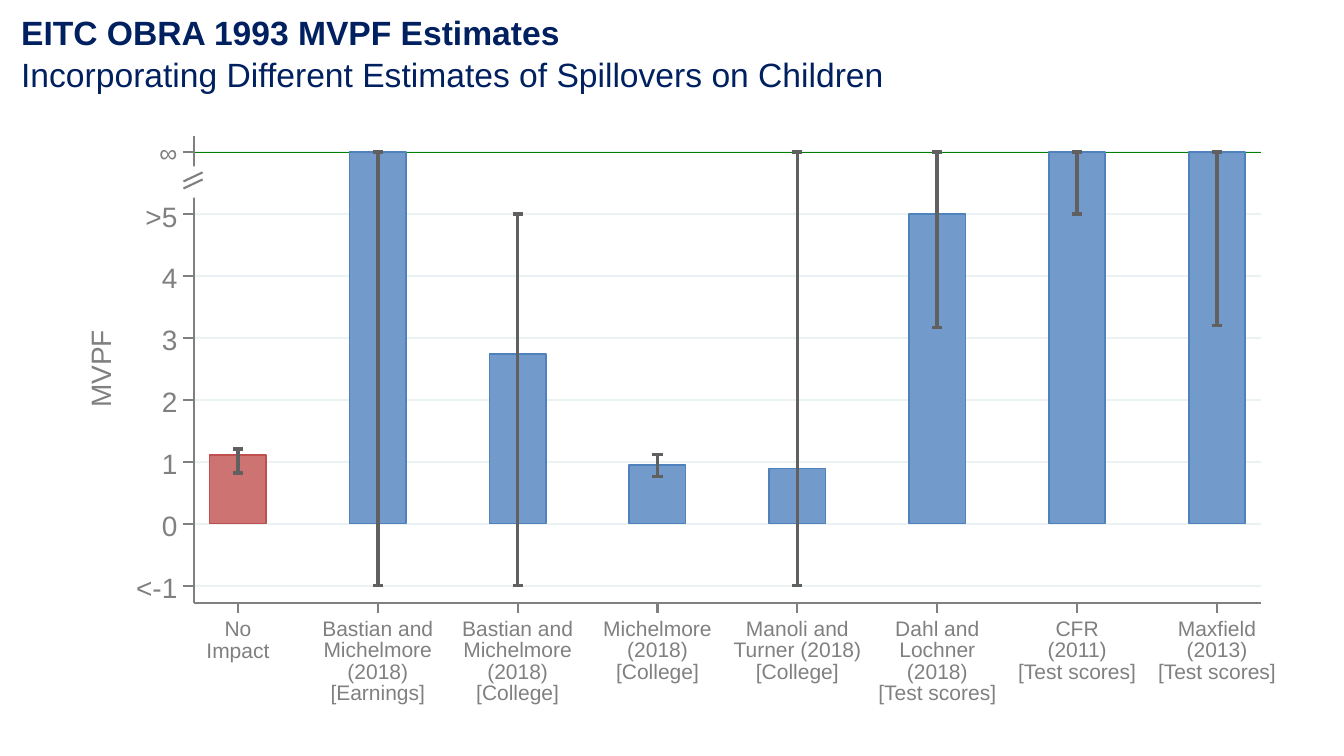
from pptx import Presentation
from pptx.dml.color import RGBColor
from pptx.enum.shapes import MSO_CONNECTOR, MSO_SHAPE
from pptx.enum.text import MSO_ANCHOR, PP_ALIGN
from pptx.oxml.ns import qn
from pptx.util import Inches, Pt
from lxml.etree import SubElement

COLORS = {
    "navy": "002060", "white": "FFFFFF", "grid": "EAF2F3", "green": "008000",
    "axis": "808080", "error": "606060", "red": "CD7371", "red edge": "C0504D",
    "blue": "729ACA", "blue edge": "4F81BD",
}
LEFT, RIGHT, TOP, BASE = 1.92, 12.51, 1.35, 5.98
LOW, HIGH = 5.81, 1.51
UNIT = (LOW - HIGH) / 7
FIRST, LAST = 2.36, 12.07
BAR, CAP, TICK = 0.56, 0.1, 0.1
INF = 6
SCALE = ["<-1", "0", "1", "2", "3", "4", ">5", "∞"]
STUDIES = [
    (["No", "Impact"], 1.11, 0.82, 1.21),
    (["Bastian and", "Michelmore", "(2018)", "[Earnings]"], INF, -1, INF),
    (["Bastian and", "Michelmore", "(2018)", "[College]"], 2.74, -1, 5),
    (["Michelmore", "(2018)", "[College]"], 0.95, 0.76, 1.12),
    (["Manoli and", "Turner (2018)", "[College]"], 0.89, -1, INF),
    (["Dahl and", "Lochner", "(2018)", "[Test scores]"], 5, 3.17, INF),
    (["CFR", "(2011)", "[Test scores]"], INF, 5, INF),
    (["Maxfield", "(2013)", "[Test scores]"], INF, 3.2, INF),
]


def rgb(name):
    return RGBColor.from_string(COLORS[name])


def level(value):
    return LOW - (value + 1) * UNIT


def add_line(slide, x1, y1, x2, y2, color, width=1.5):
    line = slide.shapes.add_connector(
        MSO_CONNECTOR.STRAIGHT, Inches(x1), Inches(y1), Inches(x2), Inches(y2))
    line.line.color.rgb = rgb(color)
    line.line.width = Pt(width)
    SubElement(line._element.spPr, qn("a:effectLst"))
    return line


def add_box(slide, left, top, width, height, fill, edge=None):
    box = slide.shapes.add_shape(
        MSO_SHAPE.RECTANGLE, Inches(left), Inches(top), Inches(width), Inches(height))
    box.shadow.inherit = False
    box.fill.solid()
    box.fill.fore_color.rgb = rgb(fill)
    if edge:
        box.line.color.rgb = rgb(edge)
        box.line.width = Pt(1.13)
    else:
        box.line.fill.background()
    return box


def set_text(shape, lines, size, color, align, pitch=None):
    frame = shape.text_frame
    frame.margin_left = frame.margin_right = 0
    frame.margin_top = frame.margin_bottom = 0
    frame.word_wrap = True
    frame.vertical_anchor = MSO_ANCHOR.TOP
    frame.text = "\n".join(lines)
    for para in frame.paragraphs:
        para.alignment = align
        para.line_spacing = pitch
        para.font.name = "Arial"
        para.font.size = Pt(size)
        para.font.color.rgb = rgb(color)
        para.font.bold = False


def add_text(slide, left, top, width, height, lines, size, align, pitch=None):
    box = slide.shapes.add_textbox(
        Inches(left), Inches(top), Inches(width), Inches(height))
    set_text(box, lines, size, "axis", align, pitch)
    return box


def add_title(slide):
    title = slide.shapes.title
    title.left, title.top = Inches(0.21), Inches(0.1)
    title.width, title.height = Inches(11.62), Inches(0.81)
    set_text(title, ["EITC OBRA 1993 MVPF Estimates",
                     "Incorporating Different Estimates of Spillovers on Children"],
             24, "navy", PP_ALIGN.LEFT, 1.05)
    title.text_frame.paragraphs[0].font.bold = True


def add_grid(slide):
    for value in range(-1, INF + 1):
        add_line(slide, LEFT, level(value), RIGHT, level(value), "grid")
    add_line(slide, LEFT, HIGH, RIGHT, HIGH, "green", 0.75)


def add_study(slide, x, lines, value, low, high):
    hue = "red" if lines[0] == "No" else "blue"
    bar = add_box(slide, x - BAR / 2, level(value), BAR, value * UNIT,
                  hue, hue + " edge")
    stem = add_line(slide, x, level(high), x, level(low), "error", 2.5)
    if high == value:
        stem.begin_connect(bar, 0)
    for end in (high, low):
        add_line(slide, x - CAP / 2, level(end), x + CAP / 2, level(end),
                 "error", 2.5)
    add_line(slide, x, BASE, x, BASE + TICK, "axis")
    add_text(slide, x - 0.69, 6.15, 1.38, 0.21 * len(lines), lines, 15,
             PP_ALIGN.CENTER, Pt(15.1))


def add_axes(slide):
    add_line(slide, LEFT, BASE, LEFT, TOP, "axis")
    add_line(slide, LEFT, BASE, RIGHT, BASE, "axis")
    for value, mark in enumerate(SCALE, -1):
        y = level(value)
        add_line(slide, LEFT, y, LEFT - TICK, y, "axis")
        add_text(slide, 1.16, y - 0.15, 0.6, 0.39, [mark],
                 18 if value == INF else 20, PP_ALIGN.RIGHT)
    name = add_text(slide, 0.57, 3.4, 0.9, 0.39, ["MVPF"], 20, PP_ALIGN.LEFT)
    name.rotation = 270


def add_break(slide):
    add_box(slide, 1.63, 1.65, 0.58, 0.31, "white")
    for y in (1.8, 1.87):
        add_line(slide, 1.82, y, 2.01, y - 0.09, "axis")


def main():
    deck = Presentation()
    deck.slide_width, deck.slide_height = Inches(13.33), Inches(7.5)
    slide = deck.slides.add_slide(deck.slide_layouts[5])
    add_title(slide)
    add_grid(slide)
    gap = (LAST - FIRST) / (len(STUDIES) - 1)
    for i, study in enumerate(STUDIES):
        add_study(slide, FIRST + i * gap, *study)
    add_axes(slide)
    add_break(slide)
    deck.save("out.pptx")


if __name__ == "__main__":
    main()
